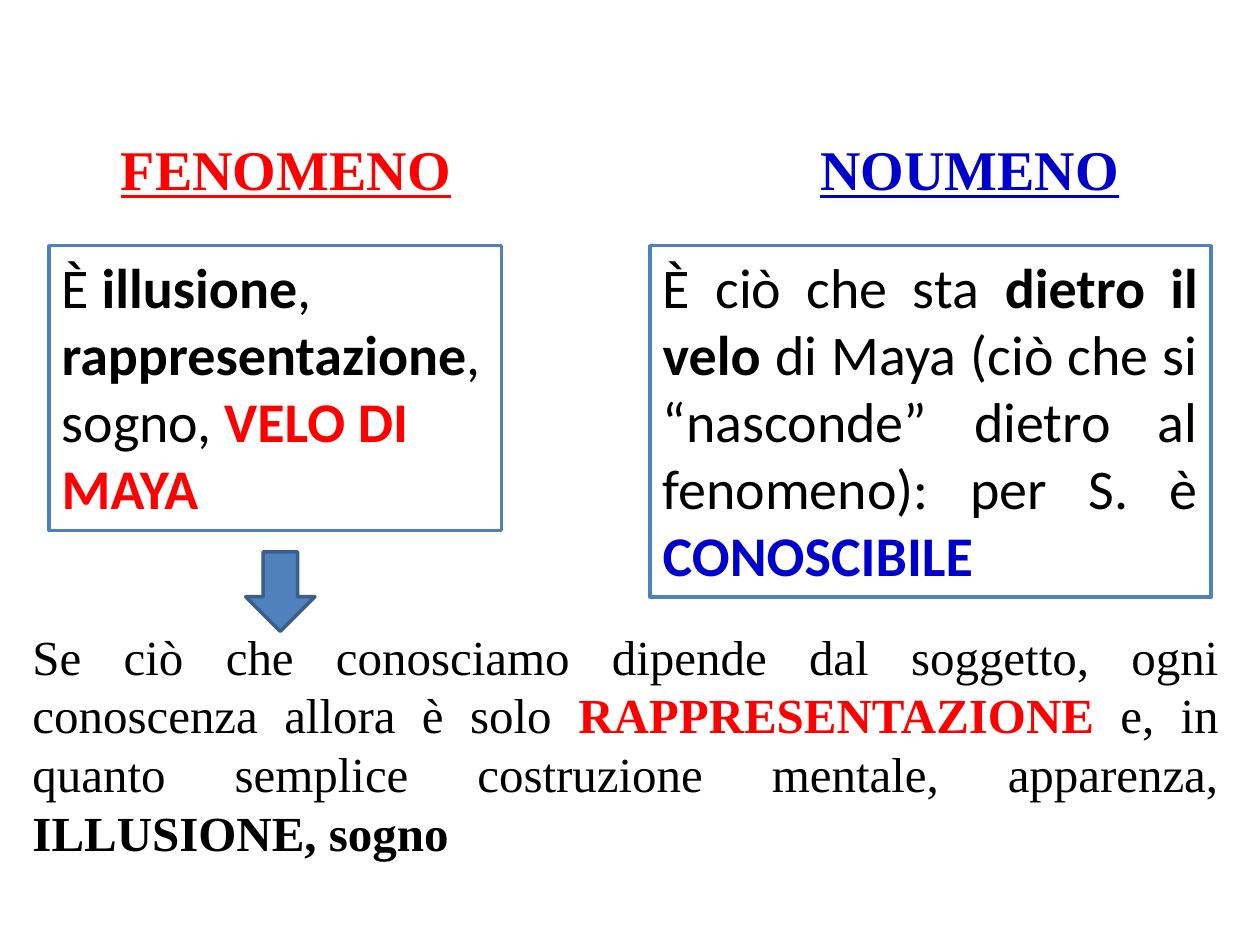
"""Build a slide comparing phenomenon and noumenon."""
from dataclasses import dataclass

from lxml import etree
from pptx import Presentation
from pptx.dml.color import RGBColor
from pptx.enum.shapes import MSO_SHAPE
from pptx.enum.text import MSO_ANCHOR, MSO_AUTO_SIZE, PP_ALIGN
from pptx.oxml.ns import qn
from pptx.util import Pt

LEFT, JUSTIFY = PP_ALIGN.LEFT, PP_ALIGN.JUSTIFY
TOP, NO_FIT = MSO_ANCHOR.TOP, MSO_AUTO_SIZE.NONE
DOWN_ARROW = MSO_SHAPE.DOWN_ARROW


@dataclass(frozen=True)
class Theme:
    serif: str = "Times New Roman"
    sans: str = "Calibri"
    large: int = 32
    medium: int = 28
    line: int = 2
    black: str = "000000"
    white: str = "FFFFFF"
    red: str = "FF0000"
    blue: str = "0000CC"
    accent: str = "4F81BD"
    accent_dark: str = "3A5F8C"


THEME = Theme()
HEADING_TOP, HEADING_HEIGHT, PANEL_TOP = 73.4, 46.1, 140.4

COLUMNS = [
    {
        "heading": [("FENOMENO", True, THEME.red)],
        "heading_span": (61.9, 213.8),
        "panel": [
            ("È ", False, THEME.black),
            ("illusione", True, THEME.black),
            (", ", False, THEME.black),
            ("rappresentazione", True, THEME.black),
            (", sogno, ", False, THEME.black),
            ("VELO DI MAYA", True, THEME.red),
        ],
        "panel_span": (28, 258.5),
        "panel_height": 162.7,
        "align": LEFT,
    },
    {
        "heading": [("NOUMENO", True, THEME.blue)],
        "heading_span": (461.5, 193),
        "panel": [
            ("È ciò che sta ", False, THEME.black),
            ("dietro il velo ", True, THEME.black),
            ("di Maya (ciò che si “nasconde” dietro al fenomeno): per S. è ",
             False, THEME.black),
            ("CONOSCIBILE", True, THEME.blue),
        ],
        "panel_span": (371.5, 320.4),
        "panel_height": 200.9,
        "align": JUSTIFY,
    },
]
CONCLUSION = [
    ("Se ciò che conosciamo dipende dal soggetto, ogni conoscenza allora è solo ",
     False, THEME.black),
    ("RAPPRESENTAZIONE", True, THEME.red),
    (" e, in quanto semplice costruzione mentale, apparenza, ", False, THEME.black),
    ("ILLUSIONE, sogno", True, THEME.black),
]
CONCLUSION_BOX = (11.5, 354.2, 692, 143.3)
ARROW_BOX = (140.4, 315.4, 39.6, 45.4)


def color(value):
    return RGBColor.from_string(value)


def place(shape, left, top, width, height):
    shape.left, shape.top = Pt(left), Pt(top)
    shape.width, shape.height = Pt(width), Pt(height)


def paint(shape, fill, line):
    shape.fill.solid()
    shape.fill.fore_color.rgb = color(fill)
    shape.line.color.rgb = color(line)
    shape.line.width = Pt(THEME.line)


def write(shape, runs, font, size, align, underline=False):
    text_frame = shape.text_frame
    text_frame.word_wrap = True
    text_frame.auto_size = NO_FIT
    text_frame.vertical_anchor = TOP
    paragraph = text_frame.paragraphs[0]
    paragraph.alignment = align
    paragraph.space_before = Pt(0)
    properties = paragraph._p.get_or_add_pPr()
    properties.set("marL", "0")
    properties.set("indent", "0")
    etree.SubElement(properties, qn("a:buNone"))
    for text, bold, run_color in runs:
        run = paragraph.add_run()
        run.text = text
        run.font.name = font
        run.font.size = Pt(size)
        run.font.bold = bold
        run.font.underline = underline
        run.font.color.rgb = color(run_color)


def add_column(heading, panel, column):
    left, width = column["heading_span"]
    place(heading, left, HEADING_TOP, width, HEADING_HEIGHT)
    write(heading, column["heading"], THEME.serif, THEME.large, JUSTIFY, True)
    left, width = column["panel_span"]
    place(panel, left, PANEL_TOP, width, column["panel_height"])
    paint(panel, THEME.white, THEME.accent)
    write(panel, column["panel"], THEME.sans, THEME.large, column["align"])


def main():
    presentation = Presentation()
    presentation.slide_width, presentation.slide_height = Pt(720), Pt(540)
    slide = presentation.slides.add_slide(
        presentation.slide_layouts.get_by_name("Comparison"))
    title, *placeholders = slide.placeholders
    title.element.getparent().remove(title.element)
    for heading, panel, column in zip(placeholders[::2], placeholders[1::2], COLUMNS):
        add_column(heading, panel, column)

    conclusion = slide.shapes.add_textbox(*map(Pt, CONCLUSION_BOX))
    write(conclusion, CONCLUSION, THEME.serif, THEME.medium, JUSTIFY)

    arrow = slide.shapes.add_shape(DOWN_ARROW, *map(Pt, ARROW_BOX))
    arrow.shadow.inherit = False
    paint(arrow, THEME.accent, THEME.accent_dark)
    presentation.save("out.pptx")


if __name__ == "__main__":
    main()
